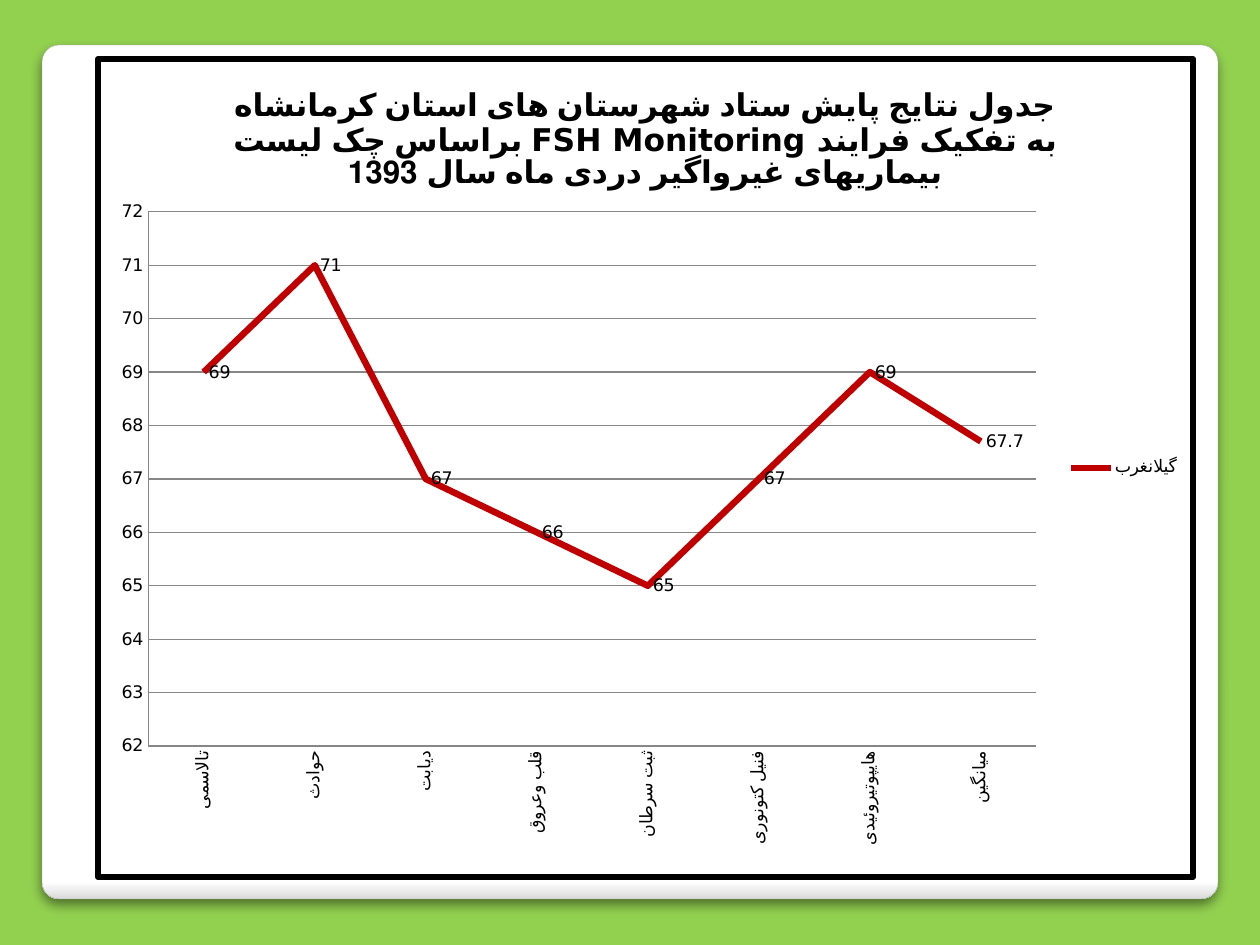
from lxml.etree import SubElement
from pptx import Presentation
from pptx.chart.data import CategoryChartData
from pptx.dml.color import RGBColor
from pptx.enum.chart import XL_CHART_TYPE, XL_LABEL_POSITION, XL_LEGEND_POSITION, XL_TICK_MARK
from pptx.enum.shapes import MSO_SHAPE
from pptx.oxml import parse_xml
from pptx.oxml.ns import nsdecls, qn
from pptx.util import Emu, Pt

PX_PER_INCH = 126
FONT = "DejaVu Sans"
COLORS = {
    "page": "92D050",
    "card": "FFFFFF",
    "card_edge": "DADADA",
    "card_line": "A4A4A4",
    "ink": "000000",
    "grid": "878787",
    "series": "C00000",
}
TITLE = ("جدول نتایج پایش ستاد شهرستان های استان کرمانشاه براساس چک لیست "
         "FSH Monitoring به تفکیک فرایند بیماریهای غیرواگیر دردی ماه سال 1393")
SERIES_NAME = "گیلانغرب"
SCORES = {
    "تالاسمی": 69,
    "حوادث": 71,
    "دیابت": 67,
    "قلب وعروق": 66,
    "ثبت سرطان": 65,
    "فنیل کتونوری": 67,
    "هایپوتیروئیدی": 69,
    "میانگین": 67.7,
}


def px(length):
    return Emu(round(length * 914400 / PX_PER_INCH))


def color(name):
    return RGBColor.from_string(COLORS[name])


def style_line(line, name, width):
    line.color.rgb = color(name)
    line.width = Pt(width)


def style_font(font, size, bold=False):
    font.name = FONT
    font.size = Pt(size)
    font.bold = bold
    font.color.rgb = color("ink")


def write_text(frame, text, size=10, bold=False):
    span = frame.paragraphs[0].add_run()
    span.text = text
    style_font(span.font, size, bold)


def add_card(page, left, top, width, height):
    card = page.shapes.add_shape(MSO_SHAPE.ROUNDED_RECTANGLE,
                                 px(left), px(top), px(width), px(height))
    card.adjustments[0] = 0.02
    card.fill.gradient()
    card.fill.gradient_angle = 270
    stops = (("card", 0.98), ("card_edge", 1))
    for stop, (name, position) in zip(card.fill.gradient_stops, stops):
        stop.color.rgb = color(name)
        stop.position = position
    style_line(card.line, "card_line", 0.16)
    add_soft_shadow(card)


def add_soft_shadow(shape):
    shape.shadow.inherit = False
    effects = shape.element.spPr.find(qn("a:effectLst"))
    shadow = SubElement(effects, qn("a:outerShdw"), blurRad=str(Pt(6)),
                        dist=str(Pt(4)), dir="5400000", rotWithShape="0")
    tint = SubElement(shadow, qn("a:srgbClr"), val=COLORS["ink"])
    SubElement(tint, qn("a:alpha"), val="45000")


def add_score_chart(page, left, top, width, height):
    data = CategoryChartData()
    data.categories = SCORES.keys()
    data.add_series(SERIES_NAME, SCORES.values())
    chart = page.shapes.add_chart(XL_CHART_TYPE.LINE, px(left), px(top),
                                  px(width), px(height), data).chart
    style_font(chart.font, 10)
    chart.has_title = True
    write_text(chart.chart_title.text_frame, TITLE, size=18, bold=True)
    chart.chart_title.include_in_layout = False
    chart.has_legend = True
    chart.legend.position = XL_LEGEND_POSITION.RIGHT
    chart.legend.include_in_layout = False
    style_axes(chart)
    style_series(chart.plots[0])
    place_plot(chart, x=0.046, y=0.187, w=0.811, h=0.653)
    frame_chart(chart, 3.35)


def style_axes(chart):
    values, categories = chart.value_axis, chart.category_axis
    values.minimum_scale, values.maximum_scale, values.major_unit = 62, 72, 1
    values.has_major_gridlines = True
    style_line(values.major_gridlines.format.line, "grid", 0.75)
    for axis in (values, categories):
        axis.major_tick_mark = axis.minor_tick_mark = XL_TICK_MARK.NONE
        style_line(axis.format.line, "grid", 0.75)
        style_font(axis.tick_labels.font, 10)
    body = categories._element.find(qn("c:txPr")).find(qn("a:bodyPr"))
    body.set("rot", "-5400000")
    body.set("vert", "horz")


def style_series(plot):
    plot.vary_by_categories = False
    series = plot.series[0]
    series.smooth = False
    style_line(series.format.line, "series", 3.75)
    labels = series.data_labels
    labels.show_value = True
    labels.position = XL_LABEL_POSITION.RIGHT
    style_font(labels.font, 10)


def place_plot(chart, **fractions):
    """Fix the inner plot area, in fractions of the chart frame."""
    area = chart._chartSpace.chart.plotArea
    for old in area.findall(qn("c:layout")):
        area.remove(old)
    sizes = "".join(f'<c:{key} val="{value}"/>' for key, value in fractions.items())
    area.insert(0, parse_xml(
        f'<c:layout {nsdecls("c")}><c:manualLayout><c:layoutTarget val="inner"/>'
        f'<c:xMode val="edge"/><c:yMode val="edge"/>{sizes}'
        f'</c:manualLayout></c:layout>'))


def frame_chart(chart, width):
    """Give the whole chart a plain fill and a border."""
    chart._chartSpace.chart.addnext(parse_xml(
        f'<c:spPr {nsdecls("c", "a")}>'
        f'<a:solidFill><a:srgbClr val="{COLORS["card"]}"/></a:solidFill>'
        f'<a:ln w="{Pt(width)}"><a:solidFill><a:srgbClr val="{COLORS["ink"]}"/>'
        f'</a:solidFill><a:round/></a:ln></c:spPr>'))


def main():
    deck = Presentation()
    deck.slide_width, deck.slide_height = px(1260), px(945)
    page = deck.slides.add_slide(deck.slide_layouts[6])
    page.background.fill.solid()
    page.background.fill.fore_color.rgb = color("page")
    add_card(page, 42, 45, 1176, 854)
    add_score_chart(page, 95, 56, 1101, 824)
    deck.save("out.pptx")


if __name__ == "__main__":
    main()
